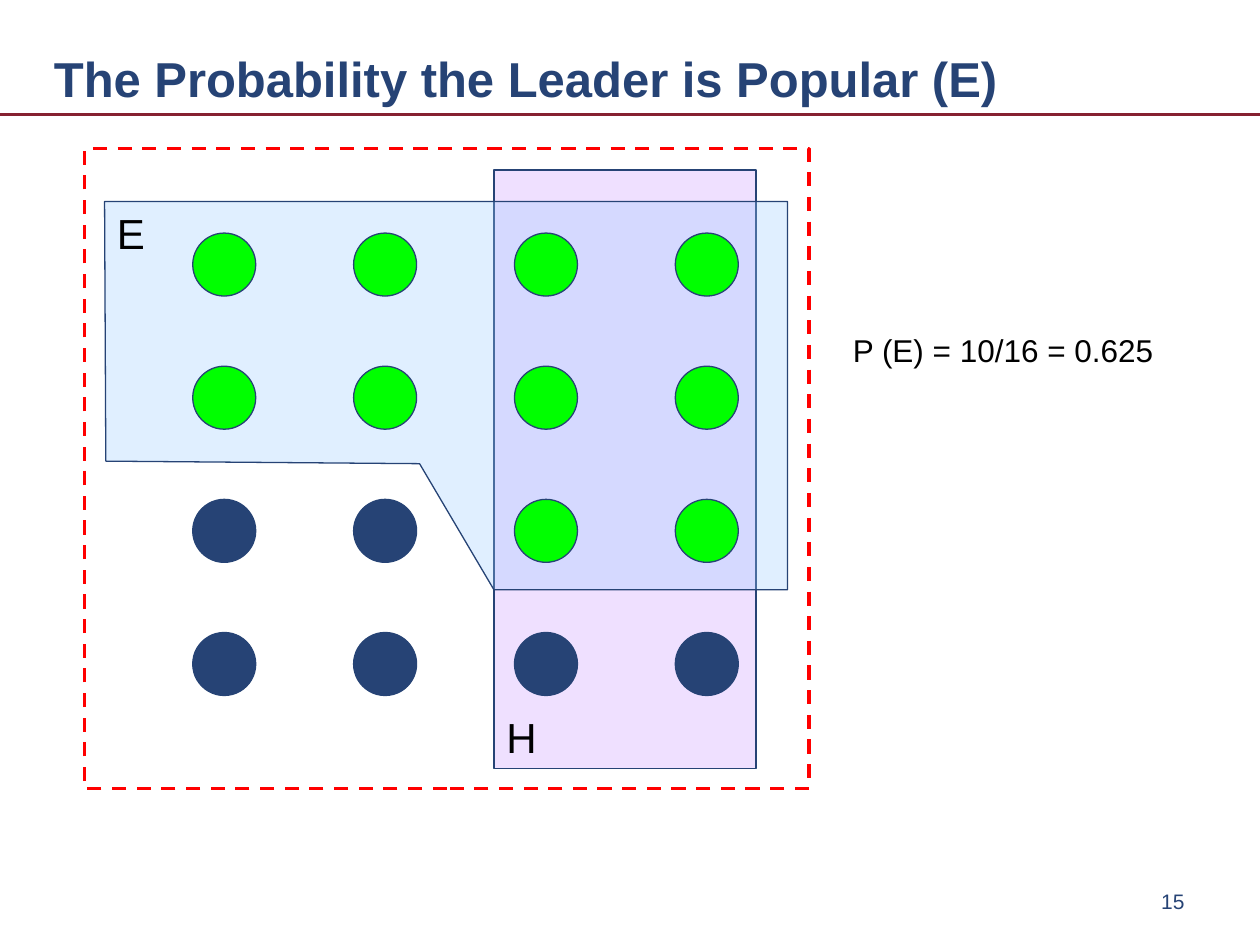
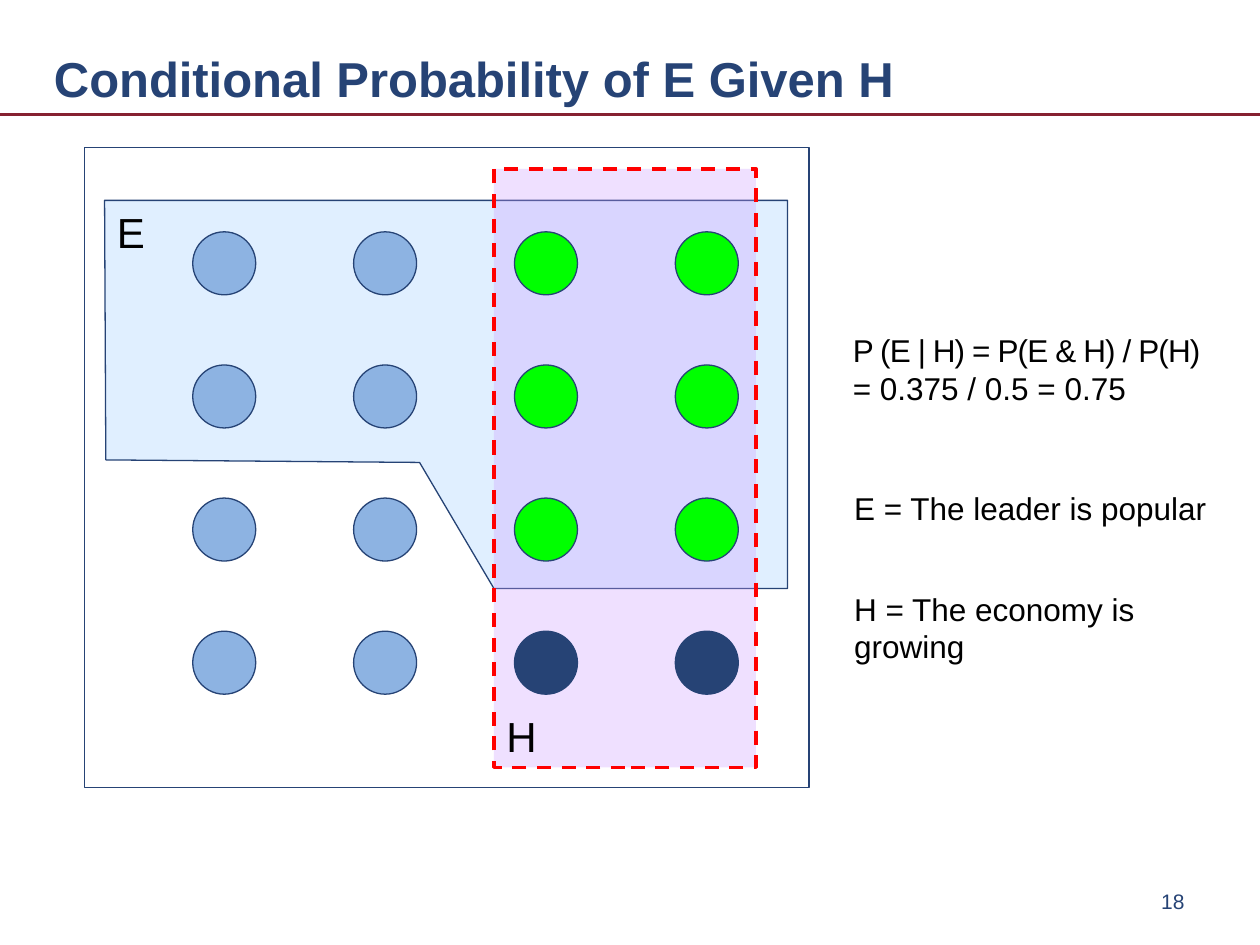
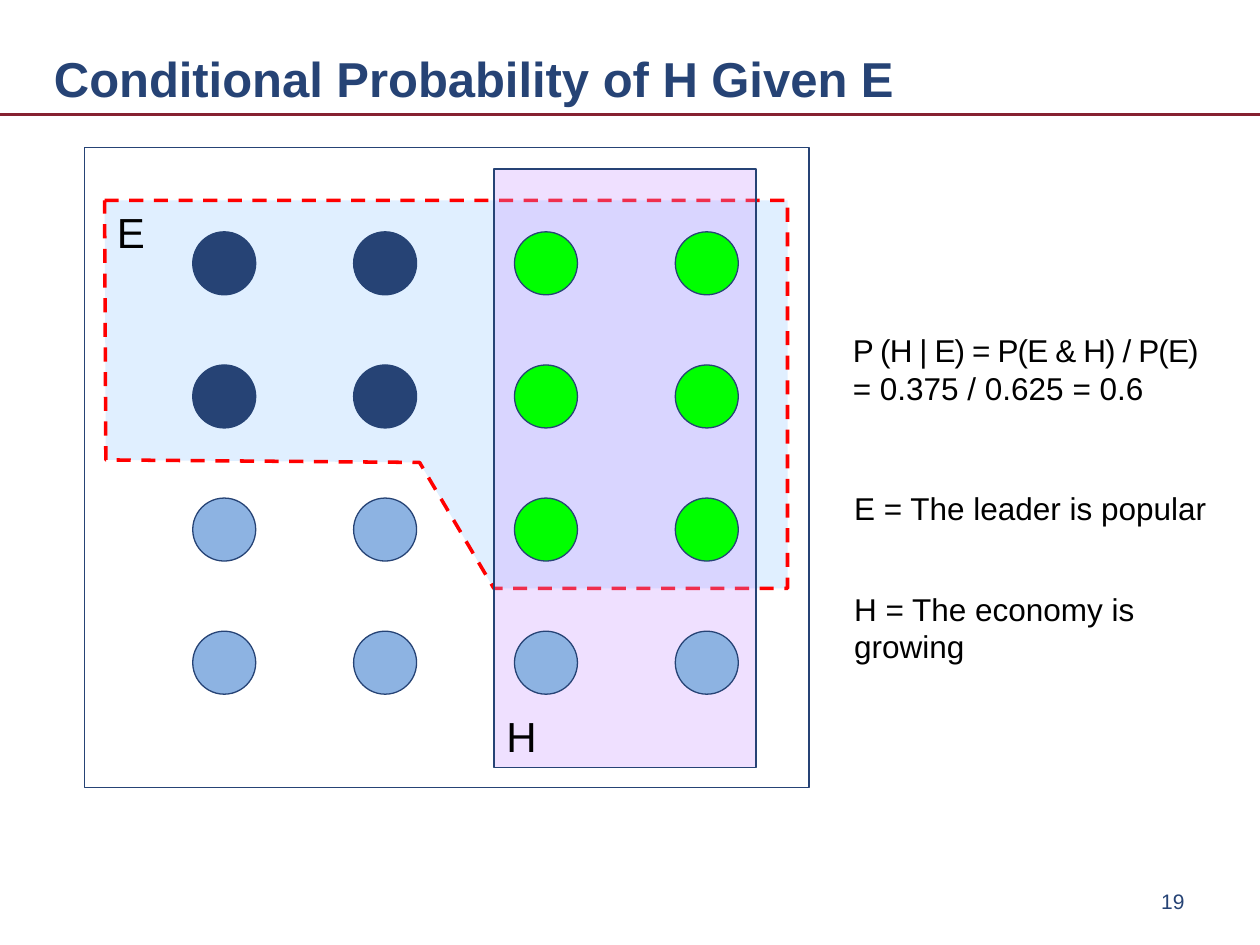
from dataclasses import dataclass
from typing import Any

from lxml.etree import SubElement
from pptx import Presentation
from pptx.dml.color import RGBColor
from pptx.enum.dml import MSO_LINE
from pptx.enum.shapes import MSO_CONNECTOR, MSO_SHAPE
from pptx.enum.text import MSO_ANCHOR, MSO_AUTO_SIZE, PP_ALIGN
from pptx.oxml.ns import qn
from pptx.util import Inches, Pt

COLORS = {
    "navy": "264375", "rule": "862131", "red": "FF0000", "black": "000000",
    "green": "00FF00", "pale": "8DB3E2", "sky": "99CCFF", "lilac": "CC99FF",
}
DOTS = {"G": "green", "N": "navy", "P": "pale"}

# Text formats
TITLE = {"name": "Arial", "size": Pt(28), "bold": True}
BODY = {"name": "Arial", "size": Pt(18)}
LABEL = {"name": "Arial", "size": Pt(24)}
NUMBER = {"name": "Arial", "size": Pt(12)}
MIDDLE = {"word_wrap": True, "vertical_anchor": MSO_ANCHOR.MIDDLE}
GROW = {"word_wrap": True, "auto_size": MSO_AUTO_SIZE.SHAPE_TO_FIT_TEXT}

# Outline of event E: x on the slide, y below the top of the diagram
E_EDGE = [(0.83, 0.42), (6.25, 0.42), (6.25, 3.5),
          (3.92, 3.5), (3.33, 2.5), (0.84, 2.48)]


@dataclass
class Box:
    left: float
    top: float
    width: float
    height: float

    def place(self) -> list[int]:
        return [Inches(n) for n in (self.left, self.top, self.width, self.height)]


@dataclass
class Note:
    lines: list[str]
    box: Box


@dataclass
class Page:
    title: str
    number: int
    top: float
    order: str   # back to front: E, H and F for the frame
    focus: str   # the part with a dashed red edge
    dots: list[str]
    notes: list[Note]


def rgb(name: str) -> RGBColor:
    return RGBColor.from_string(COLORS[name])


def apply(item: Any, form: dict[str, Any]) -> None:
    for key, value in form.items():
        setattr(item, key, value)


def write(shapes: Any, lines: list[str], box: Box, font: dict[str, Any],
          frame: dict[str, Any], color: str = "black",
          align: PP_ALIGN = PP_ALIGN.LEFT) -> None:
    body = shapes.add_textbox(*box.place()).text_frame
    apply(body, frame)
    para = body.paragraphs[0]
    para.alignment = align
    for row, line in enumerate(lines):
        if row:
            para.add_line_break()
        run = para.add_run()
        run.text = line
        apply(run.font, font)
        run.font.color.rgb = rgb(color)
        if row < len(lines) - 1:  # tighten the lines above the last
            run._r.get_or_add_rPr().set("spc", "-50")


def paint(shape: Any, fill: str | None = None, alpha: int = 100,
          focus: bool = False) -> None:
    shape.shadow.inherit = False
    if fill:
        shape.fill.solid()
        shape.fill.fore_color.rgb = rgb(fill)
        if alpha < 100:
            tone = shape._element.spPr.find(qn("a:solidFill"))[0]
            SubElement(tone, qn("a:alpha")).set("val", str(alpha * 1000))
    else:
        shape.fill.background()
    shape.line.color.rgb = rgb("red" if focus else "navy")
    shape.line.width = Pt(2 if focus else 0.75)
    if focus:
        shape.line.dash_style = MSO_LINE.DASH


def draw_part(shapes: Any, part: str, top: float, focus: bool) -> None:
    if part == "F":
        box = Box(0.67, top, 5.75, 5.08)
        paint(shapes.add_shape(MSO_SHAPE.RECTANGLE, *box.place()), focus=focus)
        return
    if part == "H":
        box = Box(3.92, top + 0.17, 2.08, 4.75)
        shape = shapes.add_shape(MSO_SHAPE.RECTANGLE, *box.place())
        paint(shape, "lilac", 30, focus)
        spot = Box(3.92, top + 4.42, 0.58, 0.5)
    else:
        edge = [(Inches(x), Inches(top + y)) for x, y in E_EDGE]
        path = shapes.build_freeform(*edge[0])
        path.add_line_segments(edge[1:], close=True)
        paint(path.convert_to_shape(), "sky", 30, focus)
        spot = Box(0.83, top + 0.42, 0.58, 0.5)
    write(shapes, [part], spot, LABEL, GROW)


def draw_dots(shapes: Any, rows: list[str], top: float) -> None:
    for row, marks in enumerate(rows):
        for col, mark in enumerate(marks):
            box = Box(1.53 + col * 3.83 / 3, top + 0.67 + row * 3.17 / 3, 0.5, 0.5)
            dot = shapes.add_shape(MSO_SHAPE.FLOWCHART_CONNECTOR, *box.place())
            paint(dot, DOTS[mark])


def draw_base(shapes: Any, page: Page) -> None:
    rule = shapes.add_connector(MSO_CONNECTOR.STRAIGHT, Inches(0), Inches(0.91),
                                Inches(10), Inches(0.91))
    rule.line.color.rgb = rgb("rule")
    rule.line.width = Pt(2)
    SubElement(rule._element.spPr, qn("a:effectLst"))
    write(shapes, [page.title], Box(0.33, 0.15, 9, 0.94), TITLE, MIDDLE, "navy")
    write(shapes, [str(page.number)], Box(7.17, 6.95, 2.33, 0.4), NUMBER,
          MIDDLE, "navy", PP_ALIGN.RIGHT)


def draw_page(deck: Any, page: Page) -> None:
    shapes = deck.slides.add_slide(deck.slide_layouts[6]).shapes
    draw_base(shapes, page)
    for note in page.notes:
        write(shapes, note.lines, note.box, BODY, GROW)
    group = shapes.add_group_shape().shapes
    for part in page.order:
        draw_part(group, part, page.top, part == page.focus)
    draw_dots(group, page.dots, page.top)


# Notes beside the diagram
KEY = [
    Note(["E = The leader is popular"], Box(6.68, 3.83, 3.08, 0.4)),
    Note(["H = The economy is growing"], Box(6.68, 4.63, 3.08, 0.7)),
]
SUM = Box(6.67, 2.58, 3.08, 0.71)

PAGES = [
    Page("The Probability the Leader is Popular (E)", 15, 1.18, "HFE", "F",
         ["GGGG", "GGGG", "NNGG", "NNNN"],
         [Note(["P (E) = 10/16 = 0.625"], Box(6.67, 2.58, 3.08, 0.4))]),
    Page("Conditional Probability of E Given H", 18, 1.17, "EHF", "H",
         ["PPGG", "PPGG", "PPGG", "PPNN"],
         [Note(["P (E | H) = P(E & H) / P(H)", "= 0.375 / 0.5 = 0.75"], SUM), *KEY]),
    Page("Conditional Probability of H Given E", 19, 1.17, "EHF", "E",
         ["NNGG", "NNGG", "PPGG", "PPPP"],
         [Note(["P (H | E) = P(E & H) / P(E)", "= 0.375 / 0.625 = 0.6"], SUM), *KEY]),
]


def main() -> None:
    deck = Presentation()
    apply(deck, {"slide_width": Inches(10), "slide_height": Inches(7.5)})
    for page in PAGES:
        draw_page(deck, page)
    deck.save("out.pptx")


if __name__ == "__main__":
    main()
